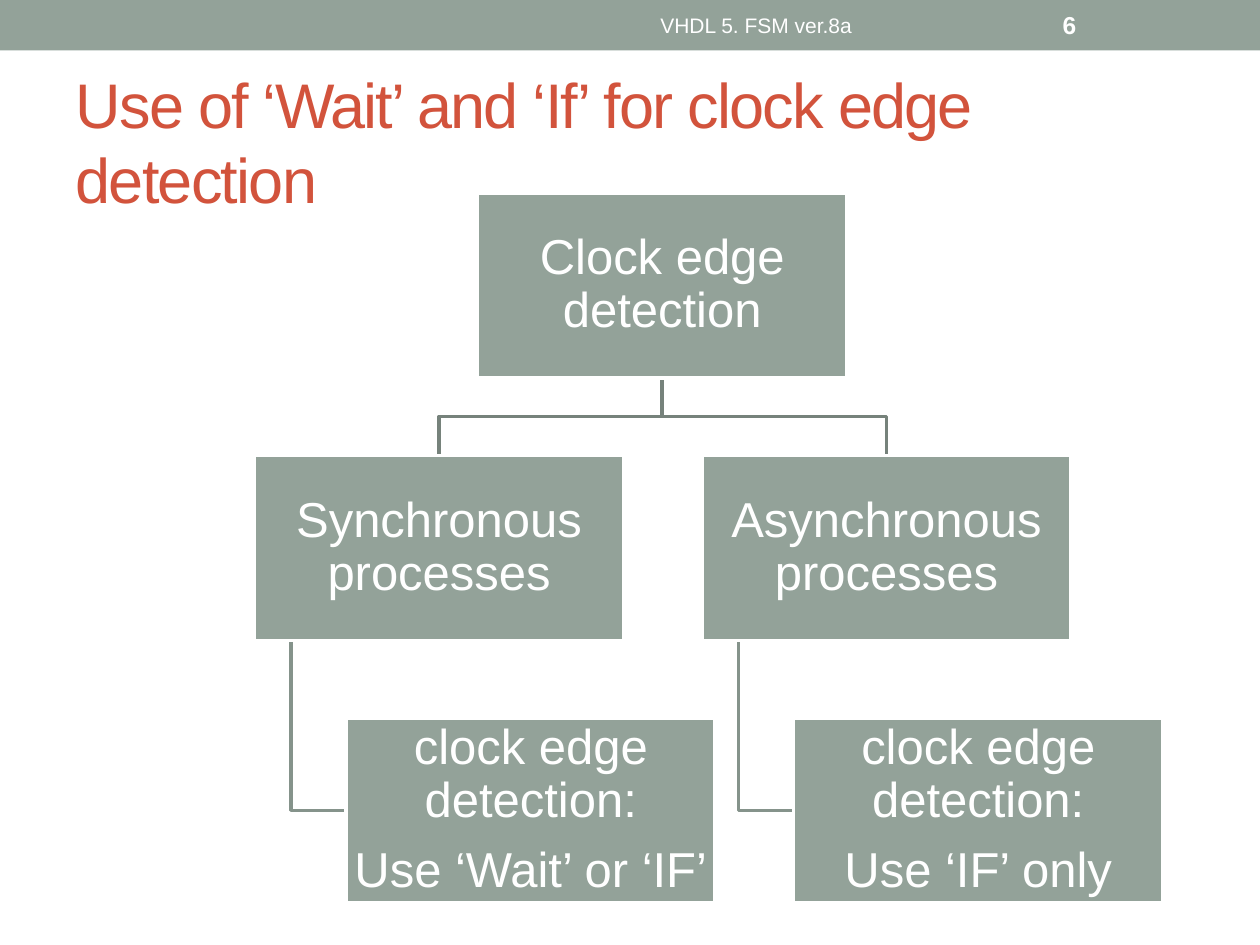
from dataclasses import dataclass
from typing import Optional

from pptx import Presentation
from pptx.dml.color import RGBColor
from pptx.enum.shapes import MSO_SHAPE as Shape
from pptx.enum.text import MSO_ANCHOR as Anchor, MSO_AUTO_SIZE as AutoSize, PP_ALIGN as Align
from pptx.util import Cm, Pt

SAGE, WHITE, RUST = "93A299", "FFFFFF", "D2533C"
TRUNK, BRANCH = "76827B", "85938B"
BOX_W, BOX_H = 7.44, 3.73
COLUMN_STEP, STEM_INSET = 9.02, 0.74
LINE_WIDTH = Pt(2)


@dataclass
class Node:
    """A box of the tree, placed in centimetres."""
    x: float
    y: float
    text: str

    @property
    def center(self) -> float:
        return self.x + BOX_W / 2

    @property
    def middle(self) -> float:
        return self.y + BOX_H / 2

    @property
    def bottom(self) -> float:
        return self.y + BOX_H


def rgb(color: str) -> RGBColor:
    """Turn a hex string into a colour."""
    return RGBColor.from_string(color)


def write(sp, text: str, size: float, color: str, align=Align.LEFT, bold: Optional[bool] = None):
    """Put formatted text, centred vertically, into a shape."""
    tf = sp.text_frame
    tf.text = text
    tf.word_wrap = True
    tf.auto_size = AutoSize.NONE
    tf.vertical_anchor = Anchor.MIDDLE
    for p in tf.paragraphs:
        p.alignment = align
        for r in p.runs:
            r.font.name = "Arial"
            r.font.size = Pt(size)
            r.font.bold = bold
            r.font.color.rgb = rgb(color)
    return tf


def add_rect(s, x: float, y: float, w: float, h: float):
    """Draw a sage rectangle without shadow or outline."""
    sp = s.shapes.add_shape(Shape.RECTANGLE, Cm(x), Cm(y), Cm(w), Cm(h))
    sp.shadow.inherit = False
    sp.fill.solid()
    sp.fill.fore_color.rgb = rgb(SAGE)
    sp.line.fill.background()
    return sp


def add_node(s, node: Node) -> None:
    """Draw one box of the tree with its text."""
    sp = add_rect(s, node.x, node.y, BOX_W, BOX_H)
    sp.line.color.rgb = rgb(WHITE)
    sp.line.width = LINE_WIDTH
    tf = write(sp, node.text, 28, WHITE, Align.CENTER)
    tf.margin_left = tf.margin_right = tf.margin_top = tf.margin_bottom = Cm(0.05)
    for p in tf.paragraphs:
        p.line_spacing = 0.9
        p.space_after = Pt(9.8)


def add_path(s, points: list[tuple[float, float]], color: str) -> None:
    """Draw an open bent line through the points."""
    start, *rest = [(Cm(x), Cm(y)) for x, y in points]
    builder = s.shapes.build_freeform(*start)
    builder.add_line_segments(rest, close=False)
    sp = builder.convert_to_shape()
    sp.shadow.inherit = False
    sp.fill.background()
    sp.line.color.rgb = rgb(color)
    sp.line.width = LINE_WIDTH


def link_child(s, parent: Node, child: Node) -> None:
    """Link the bottom of a parent to the top of its child."""
    turn = (parent.bottom + child.y) / 2
    add_path(s, [(parent.center, parent.bottom), (parent.center, turn),
                 (child.center, turn), (child.center, child.y)], TRUNK)


def link_leaf(s, parent: Node, leaf: Node) -> None:
    """Link the bottom of a parent to the left side of its leaf."""
    x = parent.x + STEM_INSET
    add_path(s, [(x, parent.bottom), (x, leaf.middle), (leaf.x, leaf.middle)], BRANCH)


def add_label(s, x: float, w: float, text: str, size: float, **style) -> None:
    """Write a label on the header band."""
    sp = s.shapes.add_textbox(Cm(x), Cm(0.05), Cm(w), Cm(0.91))
    write(sp, text, size, WHITE, **style)


def add_title(s, text: str) -> None:
    """Place and format the title."""
    sp = s.shapes.title
    sp.left, sp.top, sp.width, sp.height = Cm(1.27), Cm(1.47), Cm(22.86), Cm(2.74)
    tf = write(sp, text, 36, RUST)
    for r in tf.paragraphs[0].runs:
        r.font._element.set("spc", "-100")


def main() -> None:
    """Build the slide and save it."""
    prs = Presentation()
    prs.slide_width, prs.slide_height = Cm(25.4), Cm(19.05)
    s = prs.slides.add_slide(prs.slide_layouts[5])

    add_rect(s, 0, 0, 25.4, 1.02)
    add_title(s, "Use of ‘Wait’ and ‘If’ for clock edge detection")
    add_label(s, 9.53, 11.43, "VHDL 5. FSM ver.8a", 12, align=Align.CENTER)
    add_label(s, 21.17, 2.96, "6", 14, bold=True)

    root = Node(9.63, 3.89, "Clock edge detection")
    columns = [("Synchronous processes", "Use ‘Wait’ or ‘IF’"),
               ("Asynchronous processes", "Use ‘IF’ only")]
    nodes = [root]
    for i, (process, advice) in enumerate(columns):
        shift = i * COLUMN_STEP
        child = Node(5.13 + shift, 9.18, process)
        leaf = Node(6.98 + shift, 14.47, f"clock edge detection:\n{advice}")
        link_child(s, root, child)
        link_leaf(s, child, leaf)
        nodes += [child, leaf]
    for node in nodes:
        add_node(s, node)

    prs.save("out.pptx")


if __name__ == "__main__":
    main()
